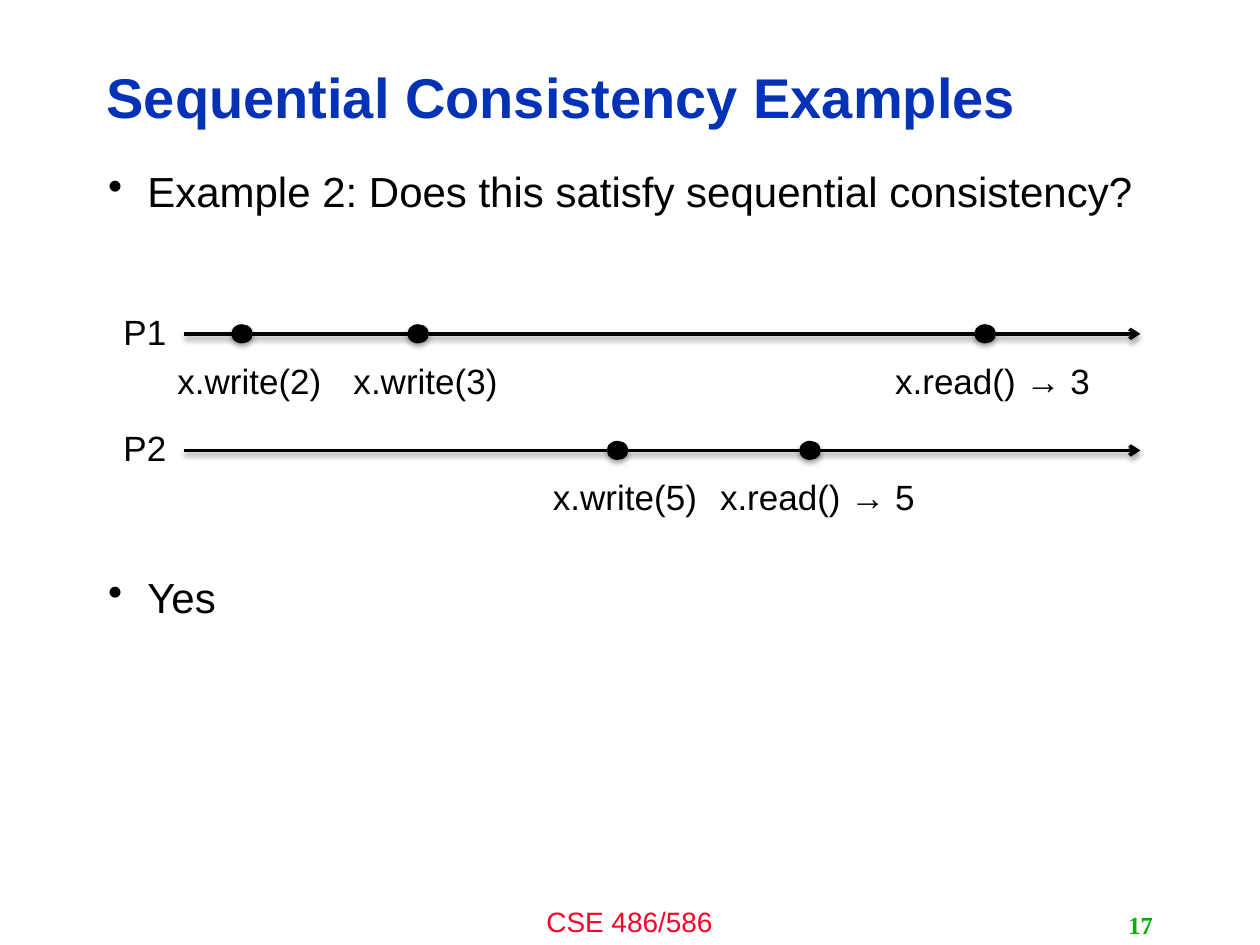
"""Build the sequential consistency slide with two process timelines."""
from dataclasses import dataclass

from lxml import etree
from pptx import Presentation
from pptx.dml.color import RGBColor
from pptx.enum.shapes import MSO_CONNECTOR, MSO_SHAPE
from pptx.enum.text import MSO_ANCHOR, PP_ALIGN
from pptx.oxml.ns import qn
from pptx.shapes.base import BaseShape
from pptx.slide import Slide
from pptx.text.text import TextFrame, _Paragraph
from pptx.util import Cm, Pt

LEFT, CENTER, RIGHT = PP_ALIGN.LEFT, PP_ALIGN.CENTER, PP_ALIGN.RIGHT
TOP, MIDDLE = MSO_ANCHOR.TOP, MSO_ANCHOR.MIDDLE
STRAIGHT, OVAL = MSO_CONNECTOR.STRAIGHT, MSO_SHAPE.OVAL

COLORS = {"title": "0332B7", "text": "000000", "footer": "FC0128", "number": "00AE00"}
LINE_START, LINE_END = 3.71, 22.99
DOT_WIDTH, DOT_HEIGHT = 0.41, 0.36
LABEL_WIDTH, LABEL_HEIGHT = 8.71, 1.12
LABEL_SHIFT, LABEL_DROP = 0.15, 0.39
BULLET_INDENT = 0.79


@dataclass(frozen=True)
class Style:
    """Look of a run and its paragraph."""

    size: float
    color: str = "text"
    font: str = "Arial"
    bold: bool = False
    align: PP_ALIGN = LEFT
    anchor: MSO_ANCHOR = TOP


@dataclass(frozen=True)
class Event:
    """Operation on a timeline, placed by the centre of its dot."""

    center: float
    label: str


@dataclass(frozen=True)
class Process:
    """Named timeline with its events."""

    name: str
    y: float
    events: tuple[Event, ...]


TITLE = Style(32, "title", bold=True, anchor=MIDDLE)
BODY = Style(24)
NAME = Style(20)
LABEL = Style(20, align=CENTER)
FOOTER = Style(16, "footer", align=CENTER)
NUMBER = Style(14, "number", "Times New Roman", True, RIGHT, MIDDLE)

PROCESSES = (
    Process("P1", 6.73, (
        Event(4.88, "x.write(2)"),
        Event(8.43, "x.write(3)"),
        Event(19.86, "x.read() → 3"),
    )),
    Process("P2", 9.08, (
        Event(12.45, "x.write(5)"),
        Event(16.33, "x.read() → 5"),
    )),
)


def rgb(name: str) -> RGBColor:
    """Look up a named colour."""
    return RGBColor.from_string(COLORS[name])


def add_run(paragraph: _Paragraph, text: str, style: Style) -> None:
    """Append a styled run."""
    paragraph.alignment = style.align
    run = paragraph.add_run()
    run.text = text
    run.font.size = Pt(style.size)
    run.font.name = style.font
    run.font.bold = style.bold
    run.font.color.rgb = rgb(style.color)


def add_frame(slide: Slide, left: float, top: float, width: float, height: float,
              anchor: MSO_ANCHOR = TOP) -> TextFrame:
    """Add a wrapping text box and return its frame."""
    frame = slide.shapes.add_textbox(Cm(left), Cm(top), Cm(width), Cm(height)).text_frame
    frame.word_wrap = True
    frame.vertical_anchor = anchor
    return frame


def add_text(slide: Slide, text: str, style: Style, left: float, top: float,
             width: float, height: float) -> None:
    """Add a text box with one line of text."""
    frame = add_frame(slide, left, top, width, height, style.anchor)
    add_run(frame.paragraphs[0], text, style)


def add_bullet(paragraph: _Paragraph, text: str, space_before: float) -> None:
    """Turn a paragraph into a hanging bullet."""
    paragraph.line_spacing = 0.9
    paragraph.space_before = Pt(space_before)
    add_run(paragraph, text, BODY)
    properties = paragraph._p.get_or_add_pPr()
    properties.set("marL", str(Cm(BULLET_INDENT)))
    properties.set("indent", str(-Cm(BULLET_INDENT)))
    etree.SubElement(properties, qn("a:buChar"), char="•")


def add_shadow(shape: BaseShape, distance: float, opacity: int) -> None:
    """Give a shape a soft shadow that falls straight down."""
    properties = shape._element.spPr
    for effects in properties.findall(qn("a:effectLst")):
        properties.remove(effects)
    effects = etree.SubElement(properties, qn("a:effectLst"))
    shadow = etree.SubElement(effects, qn("a:outerShdw"), blurRad=str(Pt(3.1)),
                              dist=str(Pt(distance)), dir="5400000", rotWithShape="0")
    color = etree.SubElement(shadow, qn("a:srgbClr"), val=COLORS["text"])
    etree.SubElement(color, qn("a:alpha"), val=str(opacity * 1000))


def add_timeline(slide: Slide, y: float) -> None:
    """Draw the arrow of a process."""
    arrow = slide.shapes.add_connector(STRAIGHT, Cm(LINE_START), Cm(y), Cm(LINE_END), Cm(y))
    arrow.line.color.rgb = rgb("text")
    arrow.line.width = Pt(2)
    etree.SubElement(arrow.line._get_or_add_ln(), qn("a:tailEnd"), type="arrow")
    add_shadow(arrow, 1.6, 38)


def add_event(slide: Slide, event: Event, y: float) -> None:
    """Draw the dot of an event and its label below."""
    dot = slide.shapes.add_shape(OVAL, Cm(event.center - DOT_WIDTH / 2), Cm(y - DOT_HEIGHT / 2),
                                 Cm(DOT_WIDTH), Cm(DOT_HEIGHT))
    dot.fill.solid()
    dot.fill.fore_color.rgb = rgb("text")
    dot.line.color.rgb = rgb("text")
    dot.line.width = Pt(0.75)
    add_shadow(dot, 1.8, 35)
    add_text(slide, event.label, LABEL, event.center + LABEL_SHIFT - LABEL_WIDTH / 2,
             y + LABEL_DROP, LABEL_WIDTH, LABEL_HEIGHT)


def add_process(slide: Slide, process: Process) -> None:
    """Draw a process: name, arrow and events."""
    add_timeline(slide, process.y)
    add_text(slide, process.name, NAME, 2.24, process.y - 0.6, 2.41, LABEL_HEIGHT)
    for event in process.events:
        add_event(slide, event, process.y)


def main() -> None:
    """Build and save the slide."""
    presentation = Presentation()
    presentation.slide_width, presentation.slide_height = Cm(25.4), Cm(19.05)
    slide = presentation.slides.add_slide(presentation.slide_layouts[6])
    add_text(slide, "CSE 486/586", FOOTER, 8.46, 18.11, 8.46, 0.94)
    add_text(slide, "Sequential Consistency Examples", TITLE, 1.9, 0.91, 20.27, 2.06)
    body = add_frame(slide, 1.93, 3.33, 21.34, 13.69)
    add_bullet(body.paragraphs[0], "Example 2: Does this satisfy sequential consistency?", 0)
    add_bullet(body.add_paragraph(), "Yes", 206)
    add_text(slide, "17", NUMBER, 18.21, 18.24, 5.28, 0.81)
    for process in PROCESSES:
        add_process(slide, process)
    presentation.save("out.pptx")


if __name__ == "__main__":
    main()
